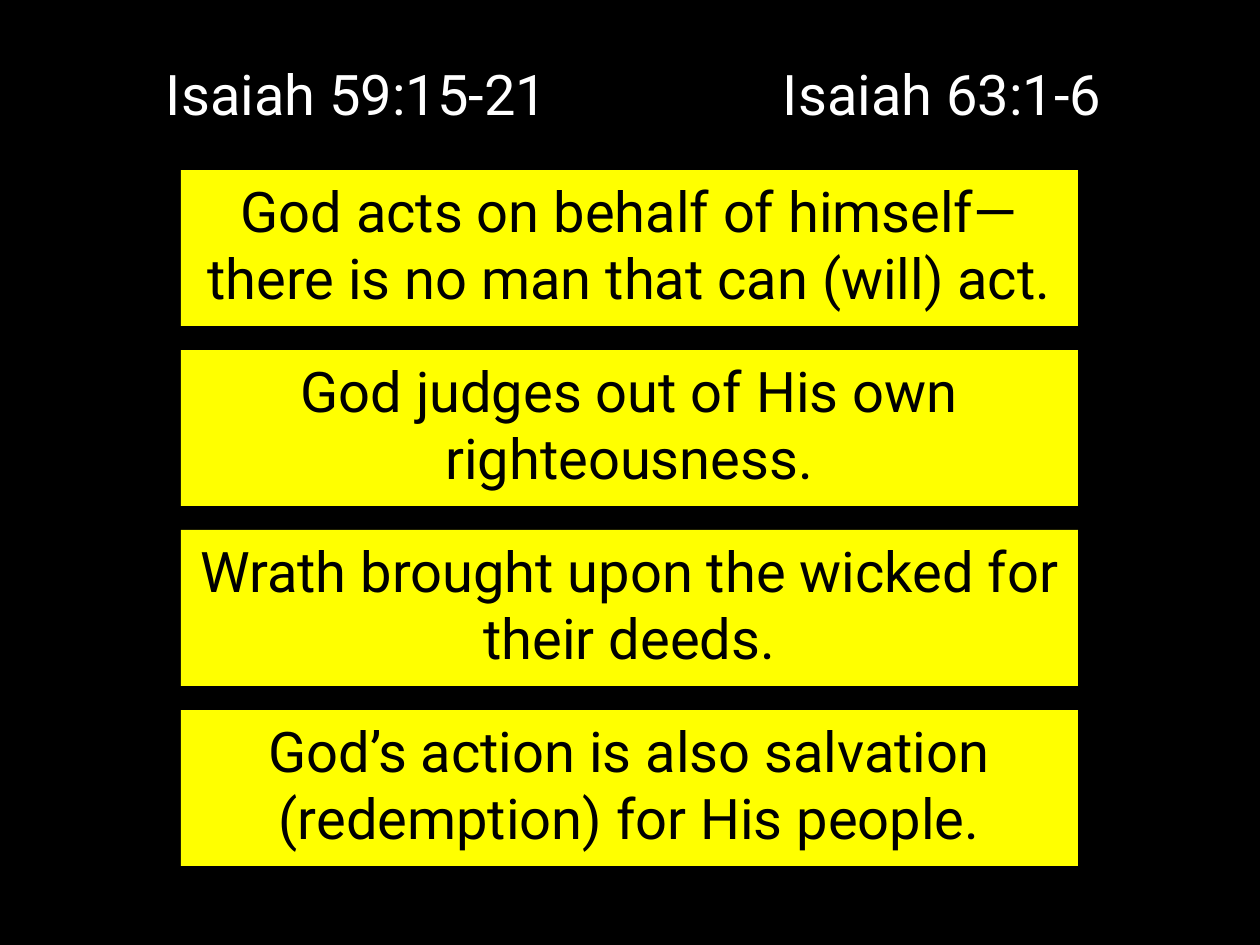
from dataclasses import dataclass

from lxml import etree
from pptx import Presentation
from pptx import util as u
from pptx.dml import color
from pptx.enum import shapes, text
from pptx.oxml import ns


@dataclass(frozen=True)
class Theme:
    """Colours and type of the slide."""
    background: color.RGBColor = color.RGBColor(0, 0, 0)
    heading: color.RGBColor = color.RGBColor(255, 255, 255)
    card: color.RGBColor = color.RGBColor(255, 255, 0)
    card_text: color.RGBColor = color.RGBColor(0, 0, 0)
    font: str = "Roboto"
    size: int = 32


THEME = Theme()
PX_PER_INCH = 126
PASSAGES = ("Isaiah 59:15-21", "Isaiah 63:1-6")
THEMES_SHARED = (
    "God acts on behalf of himself—there is no man that can (will) act.",
    "God judges out of His own righteousness.",
    "Wrath brought upon the wicked for their deeds.",
    "God’s action is also salvation (redemption) for His people.",
)


def px(length):
    """Turn a length in px into EMU."""
    return u.Emu(round(length * u.Inches(1) / PX_PER_INCH))


def style(paragraph, colour, alignment):
    """Set the font and alignment of a paragraph."""
    paragraph.alignment = alignment
    paragraph.font.name = THEME.font
    paragraph.font.size = u.Pt(THEME.size)
    paragraph.font.color.rgb = colour


def add_headings(slide, left, top, width, height, indent, column):
    """Place the passage names on one line, parted by a tab stop."""
    box = slide.shapes.add_textbox(px(left), px(top), px(width), px(height))
    frame = box.text_frame
    frame.word_wrap = True
    frame.vertical_anchor = text.MSO_ANCHOR.MIDDLE
    frame.margin_left = px(indent)
    frame.text = "\t".join(PASSAGES)
    paragraph = frame.paragraphs[0]
    style(paragraph, THEME.heading, text.PP_ALIGN.LEFT)
    paragraph.line_spacing = 0.9
    properties = paragraph.font._element.getparent()
    tabs = etree.Element(ns.qn("a:tabLst"))
    etree.SubElement(tabs, ns.qn("a:tab"), pos=str(px(column)), algn="l")
    paragraph.font._element.addprevious(tabs)
    assert tabs.getparent() is properties


def add_cards(slide, left, top, width, height, gap):
    """Stack one card for each shared theme, with equal gaps."""
    card_height = (height - gap * (len(THEMES_SHARED) - 1)) // len(THEMES_SHARED)
    for row, wording in enumerate(THEMES_SHARED):
        card = slide.shapes.add_shape(
            shapes.MSO_SHAPE.RECTANGLE,
            px(left), px(top + row * (card_height + gap)), px(width), px(card_height),
        )
        card.shadow.inherit = False
        card.fill.solid()
        card.fill.fore_color.rgb = THEME.card
        card.line.fill.background()
        frame = card.text_frame
        frame.word_wrap = True
        frame.vertical_anchor = text.MSO_ANCHOR.TOP
        frame.text = wording
        style(frame.paragraphs[0], THEME.card_text, text.PP_ALIGN.CENTER)


def main():
    """Build and save the slide."""
    presentation = Presentation()
    presentation.slide_width = px(1260)
    presentation.slide_height = px(945)
    slide = presentation.slides.add_slide(presentation.slide_layouts[6])
    slide.background.fill.solid()
    slide.background.fill.fore_color.rgb = THEME.background
    add_headings(slide, 87, 59, 1086, 76, indent=79, column=617)
    add_cards(slide, 181, 170, 897, 696, gap=24)
    presentation.save("out.pptx")


if __name__ == "__main__":
    main()
